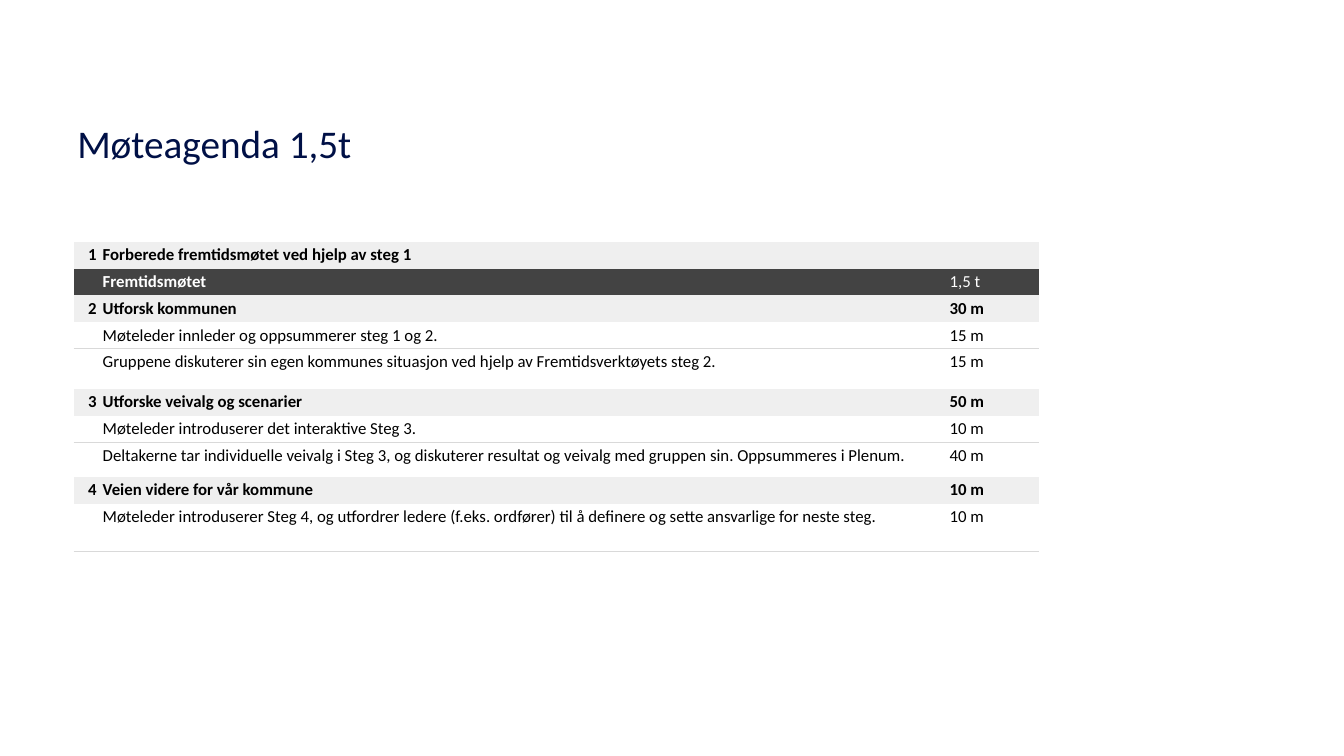
from dataclasses import dataclass
from enum import Enum

from lxml.etree import SubElement
from pptx import Presentation
from pptx.dml.color import RGBColor
from pptx.enum.text import MSO_ANCHOR, MSO_AUTO_SIZE, PP_ALIGN
from pptx.oxml import parse_xml
from pptx.oxml.ns import nsdecls, qn
from pptx.slide import Slide
from pptx.table import _Cell
from pptx.util import Inches, Pt

WIDTH, HEIGHT = Inches(13.33), Inches(7.5)
NO_STYLE = "{2D5ABB26-0587-4C30-8999-92F81FD0307C}"


@dataclass(frozen=True)
class Theme:
    font: str = "Calibri"
    title_size: int = 28
    body_size: int = 12
    title: str = "001046"
    ink: str = "000000"
    paper: str = "FFFFFF"
    band: str = "EFEFEF"
    dark: str = "434343"
    rule: str = "D9D9D9"


THEME = Theme()


class Kind(Enum):
    STEP = "step"
    MEETING = "meeting"
    DETAIL = "detail"


@dataclass(frozen=True)
class AgendaRow:
    kind: Kind
    text: str
    time: str = ""
    number: str = ""
    rows: float = 1
    ruled: bool = False


ROW = 0.265 / 7.5
COLUMNS = (0.26 / 13.33, 8.4 / 13.33, 0.92 / 13.33)
AGENDA = (
    AgendaRow(Kind.STEP, "Forberede fremtidsmøtet ved hjelp av steg 1", number="1"),
    AgendaRow(Kind.MEETING, "Fremtidsmøtet", "1,5 t"),
    AgendaRow(Kind.STEP, "Utforsk kommunen", "30 m", "2"),
    AgendaRow(Kind.DETAIL, "Møteleder innleder og oppsummerer steg 1 og 2.", "15 m", ruled=True),
    AgendaRow(Kind.DETAIL, "Gruppene diskuterer sin egen kommunes situasjon ved hjelp av "
              "Fremtidsverktøyets steg 2.", "15 m", rows=1.5),
    AgendaRow(Kind.STEP, "Utforske veivalg og scenarier", "50 m", "3"),
    AgendaRow(Kind.DETAIL, "Møteleder introduserer det interaktive Steg 3.", "10 m", ruled=True),
    AgendaRow(Kind.DETAIL, "Deltakerne tar individuelle veivalg i Steg 3, og diskuterer resultat "
              "og veivalg med gruppen sin. Oppsummeres i Plenum.", "40 m", rows=1.3),
    AgendaRow(Kind.STEP, "Veien videre for vår kommune", "10 m", "4"),
    AgendaRow(Kind.DETAIL, "Møteleder introduserer Steg 4, og utfordrer ledere (f.eks. ordfører) "
              "til å definere og sette ansvarlige for neste steg.", "10 m", rows=1.8, ruled=True),
)


def add_title(s: Slide, text: str) -> None:
    sp = s.shapes.title
    sp.left, sp.top = int(WIDTH * 0.05), int(HEIGHT * 0.107)
    sp.width, sp.height = int(WIDTH * 0.9), int(HEIGHT * 0.165)
    tf = sp.text_frame
    tf.text = text
    tf.word_wrap = True
    tf.auto_size = MSO_AUTO_SIZE.NONE
    tf.vertical_anchor = MSO_ANCHOR.MIDDLE
    p = tf.paragraphs[0]
    p.alignment = PP_ALIGN.LEFT
    font = p.runs[0].font
    font.name, font.size = THEME.font, Pt(THEME.title_size)
    font.color.rgb = RGBColor.from_string(THEME.title)


def add_rule(cell: _Cell) -> None:
    line = parse_xml(
        f'<a:lnB {nsdecls("a")} w="{Pt(1)}"><a:solidFill>'
        f'<a:srgbClr val="{THEME.rule}"/></a:solidFill></a:lnB>'
    )
    cell._tc.get_or_add_tcPr().insert(0, line)


def fill_cell(cell: _Cell, row: AgendaRow, column: int) -> None:
    fills = {Kind.STEP: THEME.band, Kind.MEETING: THEME.dark}
    if row.kind in fills:
        cell.fill.solid()
        cell.fill.fore_color.rgb = RGBColor.from_string(fills[row.kind])
    else:
        cell.fill.background()
    cell.margin_left = cell.margin_right = Inches(0.03)
    cell.margin_top = cell.margin_bottom = Inches(0.03)
    if row.ruled:
        add_rule(cell)
    text = (row.number, row.text, row.time)[column]
    p = cell.text_frame.paragraphs[0]
    if not text:
        SubElement(p._p, qn("a:endParaRPr"), sz=str(THEME.body_size * 100))
        return
    p.text = text
    p.alignment = PP_ALIGN.RIGHT if column == 0 else PP_ALIGN.LEFT
    font = p.runs[0].font
    font.name, font.size = THEME.font, Pt(THEME.body_size)
    font.bold = row.kind is Kind.STEP or (row.kind is Kind.MEETING and column == 1)
    ink = THEME.paper if row.kind is Kind.MEETING else THEME.ink
    font.color.rgb = RGBColor.from_string(ink)


def add_agenda(s: Slide) -> None:
    heights = [int(HEIGHT * ROW * row.rows) for row in AGENDA]
    widths = [int(WIDTH * share) for share in COLUMNS]
    frame = s.shapes.add_table(
        len(AGENDA), len(COLUMNS), int(WIDTH * 0.0547), int(HEIGHT * 0.32),
        sum(widths), sum(heights),
    )
    table = frame.table
    table.first_row = table.horz_banding = False
    table._tbl.tblPr.find(qn("a:tableStyleId")).text = NO_STYLE
    for column, width in zip(table.columns, widths):
        column.width = width
    for i, row in enumerate(AGENDA):
        table.rows[i].height = heights[i]
        for j in range(len(COLUMNS)):
            fill_cell(table.cell(i, j), row, j)


def main() -> None:
    prs = Presentation()
    prs.slide_width, prs.slide_height = WIDTH, HEIGHT
    s = prs.slides.add_slide(prs.slide_layouts[5])
    add_title(s, "Møteagenda 1,5t")
    add_agenda(s)
    prs.save("out.pptx")


if __name__ == "__main__":
    main()
